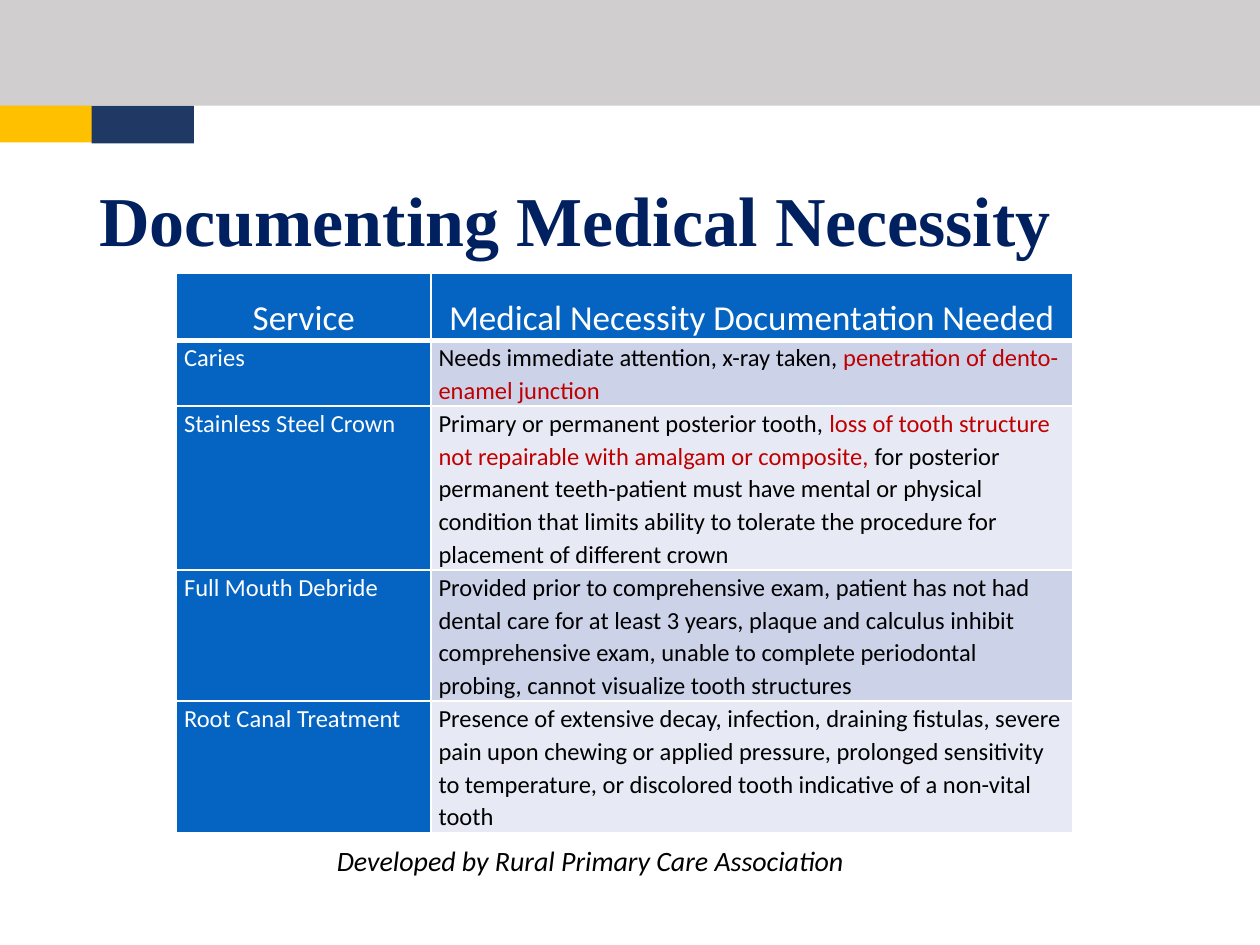
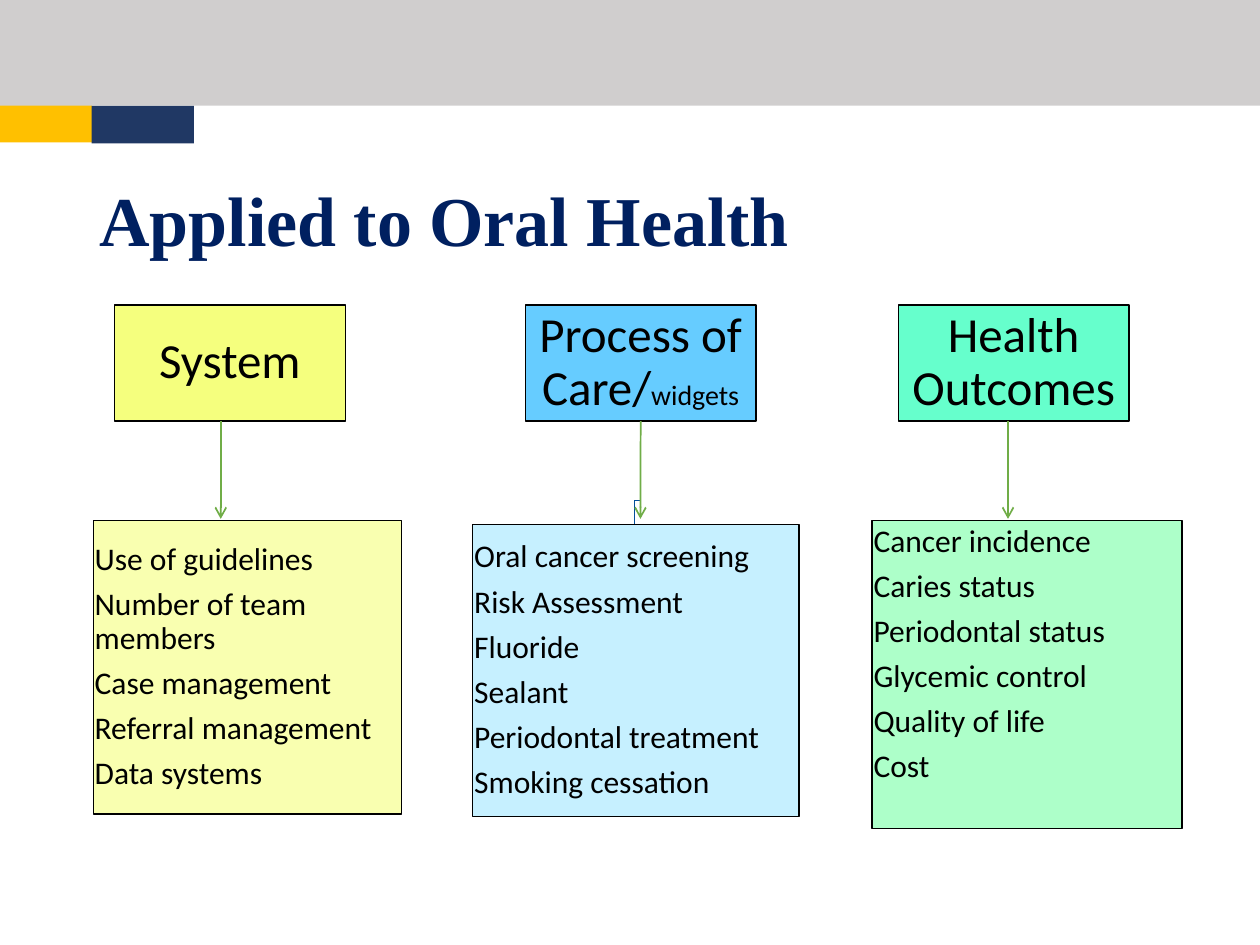
from lxml.etree import SubElement
from pptx import Presentation
from pptx.dml.color import RGBColor
from pptx.enum.shapes import MSO_CONNECTOR as Connector, MSO_SHAPE as Shape
from pptx.enum.text import MSO_ANCHOR as Anchor, MSO_AUTO_SIZE as AutoSize, PP_ALIGN as Align
from pptx.oxml.ns import qn
from pptx.util import Cm, Pt

BLACK, WHITE, RED = "000000", "FFFFFF", "C00000"
NAVY, GOLD, SLATE, GREY = "002060", "FFC000", "203864", "D0CECE"
TABLE_BLUE, ROW_TINTS = "0563C1", ("CCD3E9", "E7EAF4")
ARROW_GREEN, ELBOW_BLUE = "70AD47", "044F9B"
BODY_FONT, TITLE_FONT = "Calibri", "Times New Roman"

# left, top, width, height, colour
BANDS = [
    (0, 2.11, 1.86, 0.76, GOLD),
    (1.85, 2.13, 2.06, 0.76, SLATE),
    (0, 0, 25.4, 2.13, GREY),
]
TITLE_PLACE = (1.75, 3.45, 21.9, 2.11)

COLUMN_WIDTHS = (5.13, 12.93)
ROW_HEIGHTS = (1.35, 0.91, 2.18, 2.06, 1.88)
HEADINGS = ("Service", "Medical Necessity Documentation Needed")
SERVICES = [
    ("Caries", [
        ("Needs immediate attention, x-ray taken, ", BLACK),
        ("penetration of dento-enamel junction", RED)]),
    ("Stainless Steel Crown", [
        ("Primary or permanent posterior tooth, ", BLACK),
        ("loss of tooth structure not repairable with amalgam or composite, ", RED),
        ("for posterior permanent teeth-patient must have mental or physical condition "
         "that limits ability to tolerate the procedure for placement of different crown", BLACK)]),
    ("Full Mouth Debride", [
        ("Provided prior to comprehensive exam, patient has not had dental care for at least "
         "3 years, plaque and calculus inhibit comprehensive exam, unable to complete "
         "periodontal probing, cannot visualize tooth structures", BLACK)]),
    ("Root Canal Treatment", [
        ("Presence of extensive decay, infection, draining fistulas, severe pain upon chewing "
         "or applied pressure, prolonged sensitivity to temperature, or discolored tooth "
         "indicative of a non-vital tooth", BLACK)]),
]

HEADER_TOP, HEADER_WIDTH, HEADER_HEIGHT = 6.15, 4.65, 2.34
HEADER_BOTTOM = HEADER_TOP + HEADER_HEIGHT
ARROW_END = 10.46
STAGES = [
    {"header": [("System", 28)], "left": 2.31, "fill": "F5FF7E", "arrow_x": 4.45,
     "place": (1.88, 10.49, 6.22, 5.92), "tint": "F9FFB0", "anchor": Anchor.MIDDLE,
     "items": ["Use of guidelines", "Number of team members", "Case management",
               "Referral management", "Data systems"]},
    {"header": [("Process of Care/", 28), ("widgets", 16)], "left": 10.59, "fill": "66CCFF",
     "arrow_x": 12.91, "place": (9.53, 10.57, 6.58, 5.89), "tint": "C6F0FF",
     "anchor": Anchor.MIDDLE,
     "items": ["Oral cancer screening", "Risk Assessment", "Fluoride", "Sealant",
               "Periodontal treatment", "Smoking cessation"]},
    {"header": [("Health Outcomes", 28)], "left": 18.11, "fill": "66FFCC", "arrow_x": 20.32,
     "place": (17.58, 10.49, 6.25, 6.22), "tint": "ADFFC9", "anchor": Anchor.TOP,
     "items": ["Cancer incidence", "Caries status", "Periodontal status",
               "Glycemic control", "Quality of life", "Cost"]},
]
ELBOW = [(12.91, HEADER_BOTTOM), (12.91, 10.08), (12.8, 10.08), (12.8, 10.57)]


def rgb(colour):
    return RGBColor.from_string(colour)


def cms(lengths):
    return [Cm(length) for length in lengths]


def apply(target, values):
    for name, value in values.items():
        setattr(target, name, value)


def add_run(paragraph, text, size, colour=BLACK, **font):
    run = paragraph.add_run()
    run.text = text
    apply(run.font, {"size": Pt(size), "name": BODY_FONT, **font})
    run.font.color.rgb = rgb(colour)


def set_margins(frame, side, top=0):
    apply(frame, {"margin_left": Cm(side), "margin_right": Cm(side),
                  "margin_top": Cm(top), "margin_bottom": Cm(top)})


def add_box(slide, place, fill, line=None):
    box = slide.shapes.add_shape(Shape.RECTANGLE, *cms(place))
    box.shadow.inherit = False
    box.fill.solid()
    box.fill.fore_color.rgb = rgb(fill)
    if line:
        box.line.color.rgb = rgb(line)
        box.line.width = Pt(0.75)
    else:
        box.line.fill.background()
    return box


def dress_layout(slide):
    """Move the bands and the title place into the layout that all slides share."""
    layout = slide.slide_layout
    for index, (*place, colour) in enumerate(BANDS):
        band = add_box(slide, place, colour)
        layout.shapes.element.insert(2 + index, band.element)
    title = next(p for p in layout.placeholders if p.placeholder_format.idx == 0)
    apply(title, dict(zip(("left", "top", "width", "height"), cms(TITLE_PLACE))))


def set_title(slide, text):
    frame = slide.shapes.title.text_frame
    apply(frame, {"vertical_anchor": Anchor.MIDDLE, "auto_size": AutoSize.NONE})
    heading = frame.paragraphs[0]
    apply(heading, {"alignment": Align.LEFT, "line_spacing": 0.9})
    add_run(heading, text, 40, NAVY, name=TITLE_FONT, bold=True)


def set_borders(cell, bottom=1):
    properties = cell._tc.get_or_add_tcPr()
    widths = (("a:lnL", 1), ("a:lnR", 1), ("a:lnT", 1), ("a:lnB", bottom))
    for index, (tag, width) in enumerate(widths):
        border = SubElement(properties, qn(tag), w=str(Pt(width)))
        SubElement(SubElement(border, qn("a:solidFill")), qn("a:srgbClr"), val=WHITE)
        properties.insert(index, border)


def fill_cell(cell, pieces, fill, size=14, align=Align.LEFT, anchor=Anchor.TOP, bottom=1):
    cell.fill.solid()
    cell.fill.fore_color.rgb = rgb(fill)
    set_margins(cell, 0.15)
    cell.vertical_anchor = anchor
    paragraph = cell.text_frame.paragraphs[0]
    apply(paragraph, {"alignment": align, "line_spacing": 1.1})
    for text, colour in pieces:
        add_run(paragraph, text, size, colour)
    set_borders(cell, bottom)


def add_service_table(slide):
    place = (3.56, 5.51, sum(COLUMN_WIDTHS), sum(ROW_HEIGHTS))
    table = slide.shapes.add_table(len(ROW_HEIGHTS), len(COLUMN_WIDTHS), *cms(place)).table
    apply(table, {"first_row": False, "horz_banding": False})
    for column, width in zip(table.columns, COLUMN_WIDTHS):
        column.width = Cm(width)
    for row, height in zip(table.rows, ROW_HEIGHTS):
        row.height = Cm(height)
    for index, heading in enumerate(HEADINGS):
        fill_cell(table.cell(0, index), [(heading, WHITE)], TABLE_BLUE, 20,
                  Align.CENTER, Anchor.BOTTOM, bottom=3)
    for row, (service, needs) in enumerate(SERVICES, 1):
        fill_cell(table.cell(row, 0), [(service, WHITE)], TABLE_BLUE)
        fill_cell(table.cell(row, 1), needs, ROW_TINTS[(row - 1) % 2])


def add_credit(slide, text):
    frame = slide.shapes.add_textbox(*cms((4.9, 16.89, 14, 0.94))).text_frame
    frame.word_wrap = True
    frame.paragraphs[0].alignment = Align.CENTER
    add_run(frame.paragraphs[0], text, 16, italic=True)


def add_text_box(slide, place, fill, paragraphs, align, anchor, side, top):
    """Outlined box; each paragraph is a list of (text, size) pieces."""
    box = add_box(slide, place, fill, BLACK)
    frame = box.text_frame
    apply(frame, {"word_wrap": True, "vertical_anchor": anchor})
    set_margins(frame, side, top)
    for index, pieces in enumerate(paragraphs):
        paragraph = frame.add_paragraph() if index else frame.paragraphs[0]
        apply(paragraph, {"alignment": align, "line_spacing": 0.9})
        if index < len(paragraphs) - 1:
            paragraph.space_after = Pt(6.3)
        for text, size in pieces:
            add_run(paragraph, text, size)
    return box


def add_elbow(slide):
    start, *corners = [cms(point) for point in ELBOW]
    builder = slide.shapes.build_freeform(*start)
    builder.add_line_segments(corners, close=False)
    elbow = builder.convert_to_shape()
    elbow.shadow.inherit = False
    elbow.fill.background()
    elbow.line.color.rgb = rgb(ELBOW_BLUE)
    elbow.line.width = Pt(0.5)


def add_arrow(slide, x, header):
    arrow = slide.shapes.add_connector(
        Connector.STRAIGHT, *cms((x, HEADER_BOTTOM, x, ARROW_END)))
    if abs(header.left + header.width // 2 - Cm(x)) < Cm(0.02):
        arrow.begin_connect(header, 2)
    arrow.line.color.rgb = rgb(ARROW_GREEN)
    arrow.line.width = Pt(1)
    SubElement(arrow.line._get_or_add_ln(), qn("a:tailEnd"), type="arrow")
    SubElement(arrow.element.spPr, qn("a:effectLst"))


def add_stage(slide, stage):
    header_place = (stage["left"], HEADER_TOP, HEADER_WIDTH, HEADER_HEIGHT)
    header = add_text_box(slide, header_place, stage["fill"], [stage["header"]],
                          Align.CENTER, Anchor.MIDDLE, 0.05, 0.05)
    items = [[(item, 18)] for item in stage["items"]]
    top = 0.1 if stage["anchor"] == Anchor.TOP else 0.03
    add_text_box(slide, stage["place"], stage["tint"], items,
                 Align.LEFT, stage["anchor"], 0.03, top)
    add_arrow(slide, stage["arrow_x"], header)


def main():
    deck = Presentation()
    deck.slide_width, deck.slide_height = Cm(25.4), Cm(19.05)
    title_only = deck.slide_layouts[5]

    necessity = deck.slides.add_slide(title_only)
    dress_layout(necessity)
    set_title(necessity, "Documenting Medical Necessity")
    add_service_table(necessity)
    add_credit(necessity, "Developed by Rural Primary Care Association")

    oral_health = deck.slides.add_slide(title_only)
    set_title(oral_health, "Applied to Oral Health")
    add_elbow(oral_health)
    for stage in STAGES:
        add_stage(oral_health, stage)

    deck.save("out.pptx")


if __name__ == "__main__":
    main()
